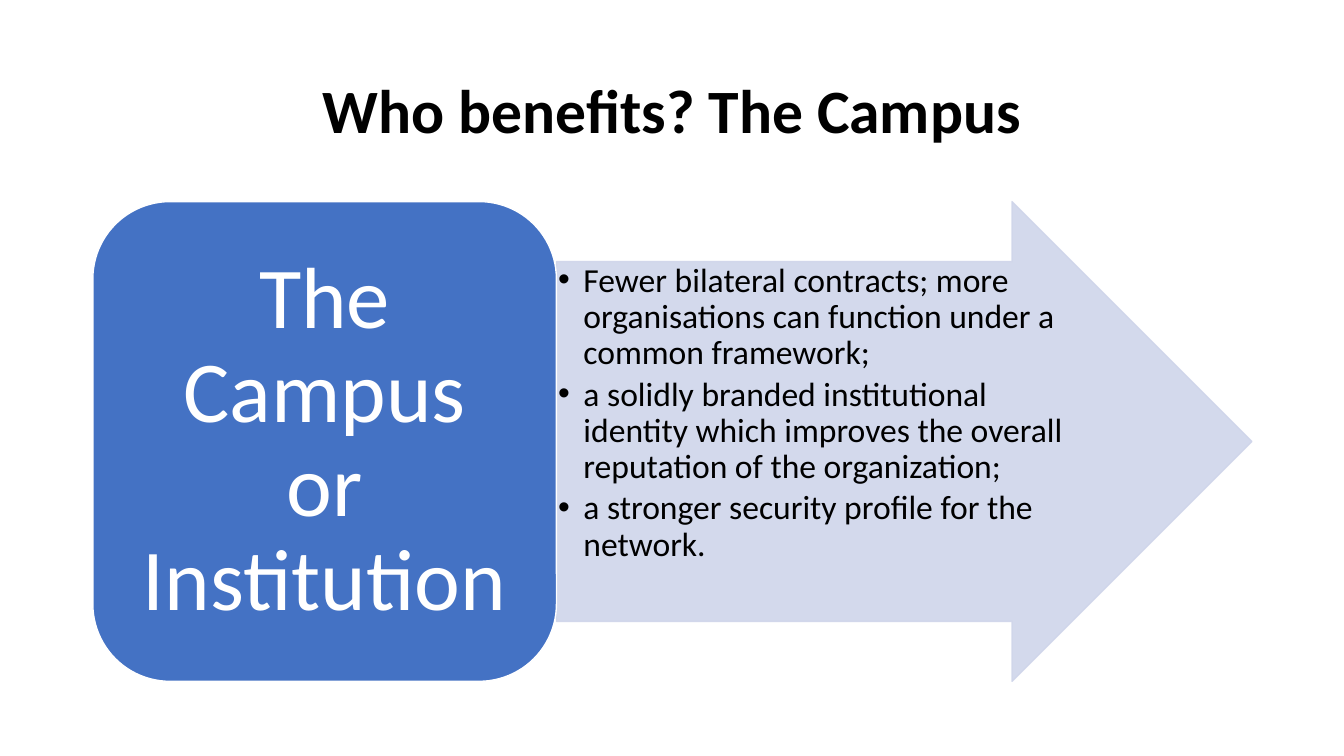
import pptx
import pptx.dml.color
import pptx.enum.shapes
import pptx.enum.text
import pptx.oxml.ns
import pptx.util
from lxml import etree

Cm = pptx.util.Cm
Pt = pptx.util.Pt
RGBColor = pptx.dml.color.RGBColor
MSO_SHAPE = pptx.enum.shapes.MSO_SHAPE
MSO_ANCHOR = pptx.enum.text.MSO_ANCHOR
MSO_AUTO_SIZE = pptx.enum.text.MSO_AUTO_SIZE
PP_ALIGN = pptx.enum.text.PP_ALIGN
qn = pptx.oxml.ns.qn

BLACK = RGBColor(0x00, 0x00, 0x00)
WHITE = RGBColor(0xFF, 0xFF, 0xFF)
BLUE = RGBColor(0x44, 0x72, 0xC4)
PALE_BLUE = RGBColor(0xCF, 0xD5, 0xEA)

FONT = "Calibri"
HEADING = "Who benefits? The Campus"
BENEFICIARY = "The Campus or Institution"
BENEFITS = [
    "Fewer bilateral contracts; more organisations can function under a common framework;",
    "a solidly branded institutional identity which improves the overall reputation of the organization;",
    "a stronger security profile for the network.",
]


def place(part, left, top, width, height):
    part.left, part.top = int(left), int(top)
    part.width, part.height = int(width), int(height)


def format_frame(frame, anchor, inset_x, inset_y):
    frame.word_wrap = True
    frame.auto_size = MSO_AUTO_SIZE.NONE
    frame.vertical_anchor = anchor
    frame.margin_left = frame.margin_right = inset_x
    frame.margin_top = frame.margin_bottom = inset_y


def format_paragraph(paragraph, size, color, align, bold=False, after=0):
    paragraph.alignment = align
    paragraph.line_spacing = 0.9
    paragraph.space_before = Pt(0)
    paragraph.space_after = Pt(after)
    for run in paragraph.runs:
        run.font.name = FONT
        run.font.size = Pt(size)
        run.font.bold = bold
        run.font.color.rgb = color


def add_bullet(paragraph, indent):
    properties = paragraph._p.get_or_add_pPr()
    properties.set("marL", str(int(indent)))
    properties.set("indent", str(-int(indent)))
    etree.SubElement(properties, qn("a:buFont")).set("typeface", "Arial")
    etree.SubElement(properties, qn("a:buChar")).set("char", "•")


def paint(shape, fill, line):
    shape.shadow.inherit = False
    shape.fill.solid()
    shape.fill.fore_color.rgb = fill
    shape.line.color.rgb = line
    shape.line.width = Pt(1)


def build_heading(slide, left, top, width, height):
    heading = slide.shapes.title
    place(heading, left, top, width, height)
    heading.text_frame.text = HEADING
    format_frame(heading.text_frame, MSO_ANCHOR.MIDDLE, Cm(0.25), Cm(0.13))
    format_paragraph(heading.text_frame.paragraphs[0], 44, BLACK, PP_ALIGN.CENTER, bold=True)


def build_benefits(slide, left, top, width, height):
    shaft = 0.75
    arrow = slide.shapes.add_shape(MSO_SHAPE.RIGHT_ARROW, left, top, width, height)
    arrow.adjustments[0] = shaft
    arrow.adjustments[1] = 0.5
    paint(arrow, PALE_BLUE, PALE_BLUE)
    for color in arrow._element.spPr.iter(qn("a:srgbClr")):
        etree.SubElement(color, qn("a:alpha")).set("val", "90000")

    benefits = slide.placeholders[1]
    benefits._element.addprevious(arrow._element)
    place(benefits, left, top + height * (1 - shaft) / 2,
          width - height * shaft / 2, height * shaft)
    format_frame(benefits.text_frame, MSO_ANCHOR.TOP, Cm(0.04), Cm(0.04))
    benefits.text_frame.text = "\n".join(BENEFITS)
    for paragraph in benefits.text_frame.paragraphs:
        format_paragraph(paragraph, 24, BLACK, PP_ALIGN.LEFT, after=3.6)
        add_bullet(paragraph, Cm(0.64))


def build_beneficiary(slide, left, top, width, height):
    beneficiary = slide.shapes.add_shape(MSO_SHAPE.ROUNDED_RECTANGLE, left, top, width, height)
    paint(beneficiary, BLUE, WHITE)
    beneficiary.text_frame.text = BENEFICIARY
    format_frame(beneficiary.text_frame, MSO_ANCHOR.MIDDLE, Cm(0.66), Cm(0.33))
    format_paragraph(beneficiary.text_frame.paragraphs[0], 62, WHITE, PP_ALIGN.CENTER)


def build_slide(presentation):
    slide = presentation.slides.add_slide(presentation.slide_layouts[1])
    left, width = Cm(2.34), Cm(29.21)
    top, height = Cm(5.08), Cm(12.09)
    beneficiary_width = int(width * 0.4)
    build_heading(slide, left, Cm(1.02), width, Cm(3.68))
    build_benefits(slide, left + beneficiary_width, top, width - beneficiary_width, height)
    build_beneficiary(slide, left, top, beneficiary_width, height)


def main():
    presentation = pptx.Presentation()
    presentation.slide_width = Cm(33.87)
    presentation.slide_height = Cm(19.05)
    build_slide(presentation)
    presentation.save("out.pptx")


if __name__ == "__main__":
    main()
